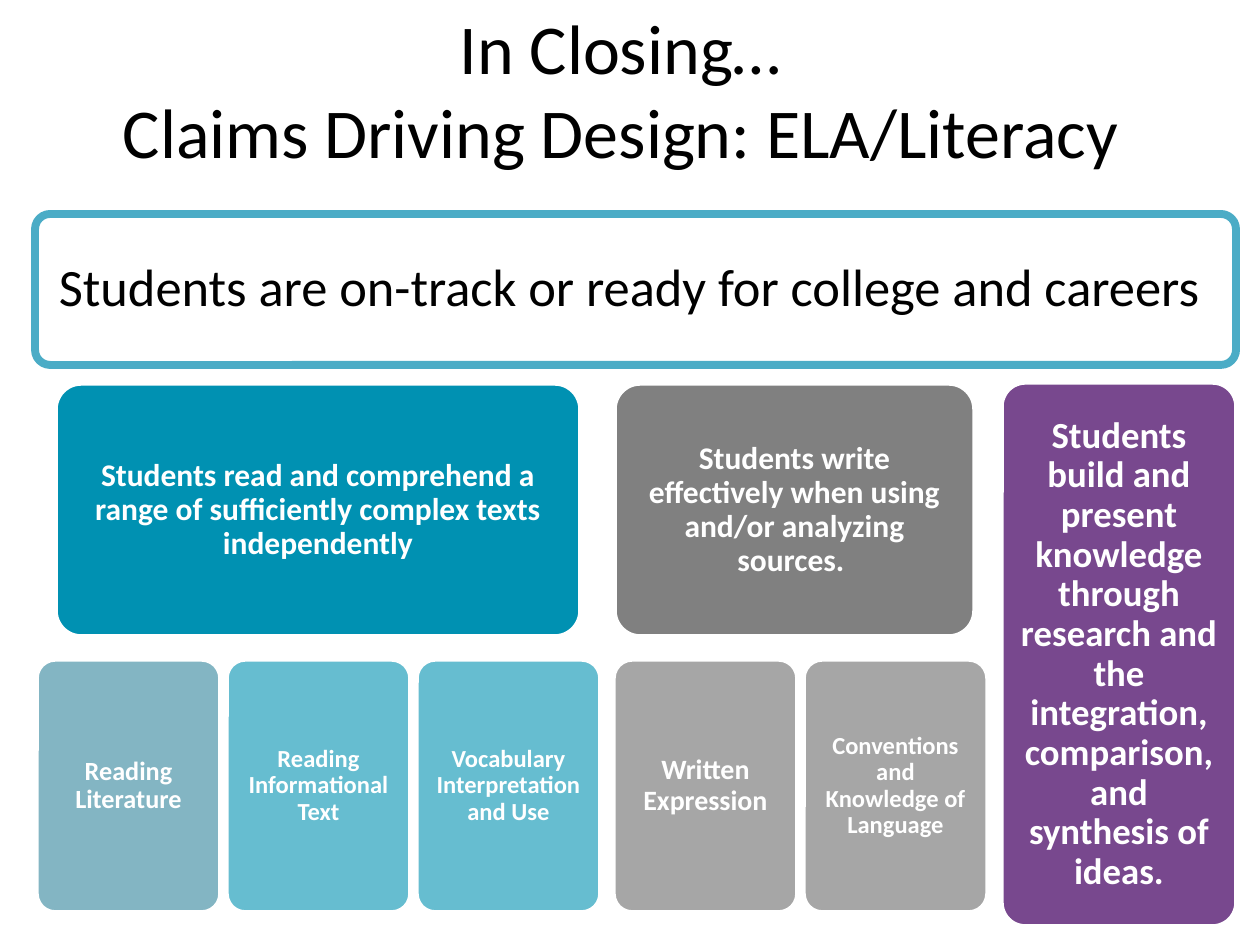
import pptx
import pptx.dml.color
import pptx.enum.shapes
import pptx.enum.text
import pptx.oxml.ns
import pptx.util
from lxml import etree

Color = pptx.dml.color.RGBColor
WHITE = Color(0xFF, 0xFF, 0xFF)
BLACK = Color(0, 0, 0)
AQUA = Color(0x4B, 0xAC, 0xC6)
TEAL = Color(0x00, 0x91, 0xB2)
STEEL = Color(0x31, 0x85, 0x9C)
GRAY = Color(0x80, 0x80, 0x80)
SILVER = Color(0xA6, 0xA6, 0xA6)
PURPLE = Color(0x78, 0x48, 0x8E)
FONT = "Calibri"
SCALE = 914400 / 126


def px(n):
    return pptx.util.Emu(round(n * SCALE))


def write(para, text, size, color, bold=False):
    run = para.add_run()
    run.text = text
    run.font.name = FONT
    run.font.size = pptx.util.Pt(size)
    run.font.bold = bold
    run.font.color.rgb = color


def setup(frame, pad):
    frame.word_wrap = True
    frame.vertical_anchor = pptx.enum.text.MSO_ANCHOR.MIDDLE
    frame.margin_left = frame.margin_right = px(pad)
    frame.margin_top = frame.margin_bottom = px(pad)
    para = frame.paragraphs[0]
    para.alignment = pptx.enum.text.PP_ALIGN.CENTER
    return para


def card(slide, box, text, size, fill, pad, alpha=100,
         line=WHITE, width=2, ink=WHITE, bold=True):
    kind = pptx.enum.shapes.MSO_SHAPE.ROUNDED_RECTANGLE
    shape = slide.shapes.add_shape(kind, *map(px, box))
    shape.adjustments[0] = 0.1
    shape.shadow.inherit = False
    shape.fill.solid()
    shape.fill.fore_color.rgb = fill
    shape.line.color.rgb = line
    shape.line.width = pptx.util.Pt(width)
    if alpha < 100:
        name = pptx.oxml.ns.qn("a:srgbClr")
        tint = next(shape.fill._xPr.iter(name))
        node = etree.SubElement(tint, pptx.oxml.ns.qn("a:alpha"))
        node.set("val", str(alpha * 1000))
    para = setup(shape.text_frame, pad)
    para.line_spacing = 0.9
    write(para, text, size, ink, bold)


def title(slide, box, lines):
    frame = slide.shapes.add_textbox(*map(px, box)).text_frame
    para = setup(frame, 6)
    frame.margin_left, frame.margin_right = px(30), px(13)
    for i, text in enumerate(lines):
        if i:
            para.add_line_break()
        write(para, text, 40, BLACK)


def banner(slide, box, text):
    card(slide, box, text, 30, WHITE, 15,
         line=AQUA, width=4.5, ink=BLACK, bold=False)


def claim(slide, box, inset, wide, text, fill, parts):
    left, top, _, high = box
    card(slide, (left + inset, top, wide, high), text, 18, fill, 9)
    for i, (name, size, tone, alpha) in enumerate(parts):
        spot = (left + i * 190, top + 276, 183, high)
        card(slide, spot, name, size, tone, 8, alpha)


def main():
    deck = pptx.Presentation()
    deck.slide_width, deck.slide_height = px(1260), px(945)
    slide = deck.slides.add_slide(deck.slide_layouts[6])

    title(slide, (35, 26, 1154, 126),
          ["In Closing…", "Claims Driving Design: ELA/Literacy"])
    banner(slide, (35, 214, 1201, 151),
           "Students are on-track or ready for college and careers ")
    claim(slide, (37, 384, 563, 252), 19, 524,
          "Students read and comprehend a range of sufficiently "
          "complex texts independently", TEAL,
          [("Reading Literature", 15, STEEL, 60),
           ("Reading Informational Text", 14, TEAL, 60),
           ("Vocabulary Interpretation and Use", 14, TEAL, 60)])
    claim(slide, (614, 384, 373, 252), 1, 359,
          "Students write effectively when using and/or "
          "analyzing sources. ", GRAY,
          [("Written Expression", 16, SILVER, 100),
           ("Conventions and Knowledge of Language", 14, SILVER, 100)])
    card(slide, (1002, 383, 234, 543),
         "Students build and present knowledge through research and the "
         "integration, comparison, and synthesis of ideas.",
         21, PURPLE, 11)
    deck.save("out.pptx")


if __name__ == "__main__":
    main()
